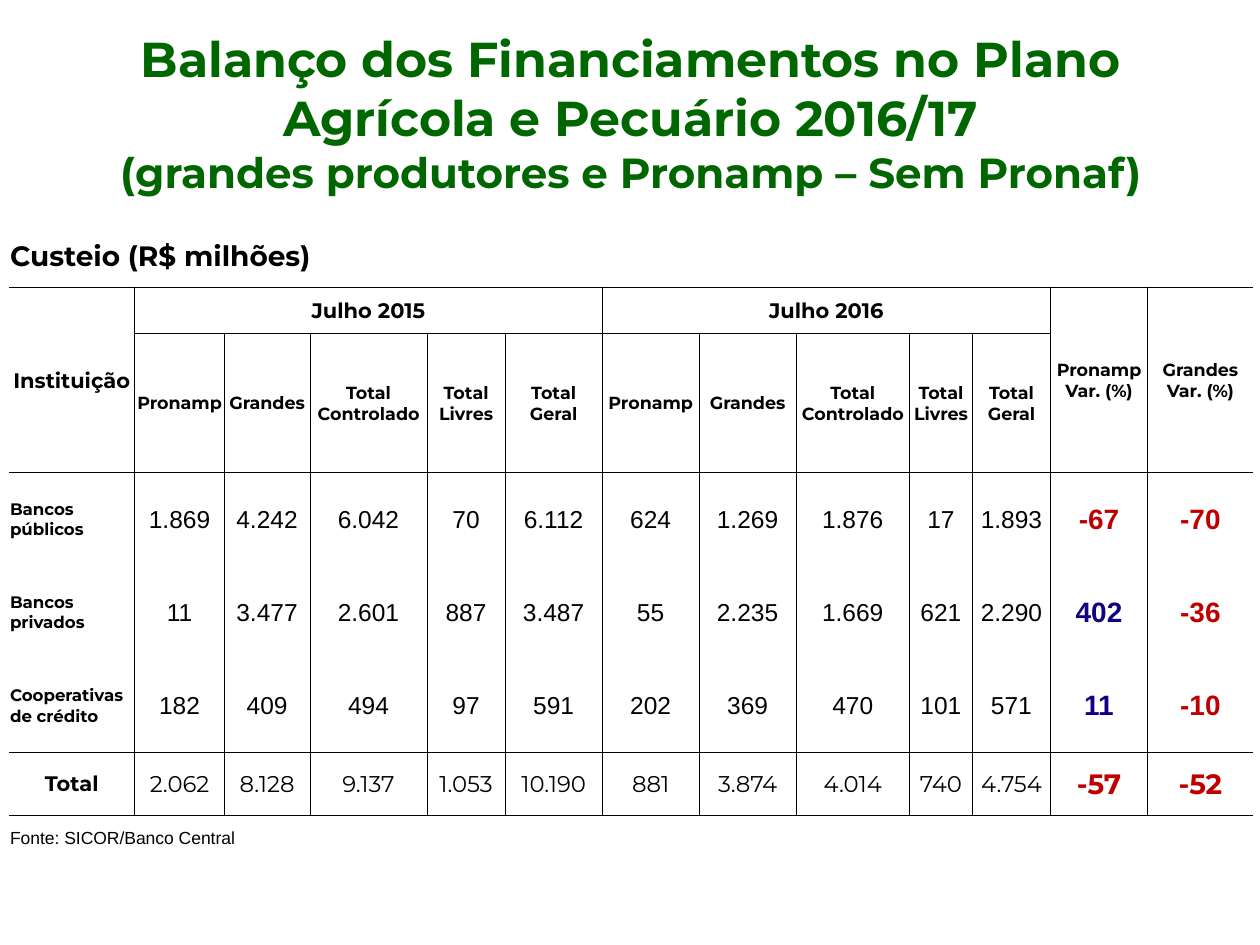
from lxml.etree import SubElement
from pptx import Presentation
from pptx.dml.color import RGBColor
from pptx.enum.text import MSO_ANCHOR, PP_ALIGN
from pptx.oxml.ns import qn
from pptx.util import Inches, Pt

BLACK = RGBColor(0x00, 0x00, 0x00)
GREEN = RGBColor(0x00, 0x66, 0x00)
RED = RGBColor(0xC0, 0x00, 0x00)
BLUE = RGBColor(0x11, 0x02, 0x84)

COLUMN_WIDTHS = [1, 0.71, 0.68, 0.76, 0.17, 0.62, 0.33, 0.44, 0.77,
                 0.11, 0.66, 0.12, 0.78, 0.5, 0.2, 0.42, 0.77, 0.84]
ROW_HEIGHTS = [0.5, 0.37, 1.1, 0.74, 0.74, 0.74, 0.5, 0.37]
LAST_COLUMN = len(COLUMN_WIDTHS) - 1
RULED_ROWS = range(1, 7)
LINES_ABOVE = {1, 2, 3, 6, 7}

# First grid column and number of columns of each visible column
FIELDS = [(0, 1), (1, 1), (2, 1), (3, 2), (5, 1), (6, 2), (8, 1),
          (9, 2), (11, 2), (13, 1), (14, 2), (16, 1), (17, 1)]

# Row, column, row span, column span, text
CAPTIONS = [
    (0, 0, 1, 4, "Custeio (R$ milhões)"),
    (0, 4, 1, 3, ""), (0, 7, 1, 1, ""), (0, 8, 1, 2, ""), (0, 10, 1, 2, ""),
    (0, 12, 1, 1, ""), (0, 13, 1, 2, ""),
    (0, 15, 1, 1, ""), (0, 16, 1, 1, ""), (0, 17, 1, 1, ""),
    (1, 0, 2, 1, "Instituição"),
    (1, 1, 1, 7, "Julho 2015"), (1, 8, 1, 8, "Julho 2016"),
    (1, 16, 2, 1, "Pronamp Var. (%)"), (1, 17, 2, 1, "Grandes Var. (%)"),
    (7, 0, 1, 3, "Fonte: SICOR/Banco Central"),
]
MEASURES = ["Pronamp", "Grandes", "Total Controlado", "Total Livres", "Total Geral"]
FIGURES = [
    ["Bancos públicos", "1.869", "4.242", "6.042", "70", "6.112",
     "624", "1.269", "1.876", "17", "1.893", "-67", "-70"],
    ["Bancos privados", "11", "3.477", "2.601", "887", "3.487",
     "55", "2.235", "1.669", "621", "2.290", "402", "-36"],
    ["Cooperativas de crédito", "182", "409", "494", "97", "591",
     "202", "369", "470", "101", "571", "11", "-10"],
    ["Total", "2.062", "8.128", "9.137", "1.053", "10.190",
     "881", "3.874", "4.014", "740", "4.754", "-57", "-52"],
]


def table_regions():
    """List every cell region as (row, column, row span, column span, text)."""
    regions = list(CAPTIONS)
    regions += [(2, column, 1, span, text)
                for (column, span), text in zip(FIELDS[1:11], MEASURES * 2)]
    for row, texts in enumerate(FIGURES, start=3):
        regions += [(row, column, 1, span, text)
                    for (column, span), text in zip(FIELDS, texts)]
    regions += [(7, column, 1, span, "") for column, span in FIELDS[3:]]
    return regions


def cell_format(row, column, text):
    """Return the font values, the colour and the alignment for a table cell."""
    font = {"name": "Montserrat", "size": Pt(12), "bold": True}
    color, align = BLACK, PP_ALIGN.CENTER
    if row == 0:
        font["size"], align = Pt(16), PP_ALIGN.LEFT
    elif row == 7:
        font, align = {"name": "Arial", "size": Pt(10), "bold": False}, PP_ALIGN.LEFT
    elif row == 2 or (row == 1 and column >= 16):
        font["size"] = Pt(10)
    elif row >= 3:
        if column and row < 6:
            font["name"] = "Arial"
        if column >= 16:
            font["size"] = Pt(16)
            color = RED if text.startswith("-") else BLUE
        elif column:
            font.update(size=Pt(14 if row < 6 else 13), bold=False)
        elif row < 6:
            font["size"], align = Pt(9.5), PP_ALIGN.LEFT
    return font, color, align


class SlideBuilder:
    def __init__(self, slide):
        self.slide = slide

    def add_span(self, para, text, font, color):
        span = para.add_run()
        span.text = text
        for name, value in font.items():
            setattr(span.font, name, value)
        span.font.color.rgb = color

    def title(self, lines, left, top, width, height):
        box = self.slide.shapes.add_textbox(
            Inches(left), Inches(top), Inches(width), Inches(height))
        frame = box.text_frame
        frame.word_wrap = True
        frame.vertical_anchor = MSO_ANCHOR.MIDDLE
        para = frame.paragraphs[0]
        para.alignment = PP_ALIGN.CENTER
        for index, (text, size) in enumerate(lines):
            if index:
                para.add_line_break()
            self.add_span(para, text, {"name": "Montserrat", "size": Pt(size), "bold": True}, GREEN)

    def borders(self, cell, edges):
        """Draw thin lines on the edges that are true and none on the others."""
        properties = cell._tc.get_or_add_tcPr()
        for position, (tag, visible) in enumerate(edges.items()):
            line = SubElement(properties, qn(f"a:{tag}"), w=str(Pt(0.5)))
            if visible:
                fill = SubElement(line, qn("a:solidFill"))
                SubElement(fill, qn("a:srgbClr"), val=str(BLACK))
            else:
                SubElement(line, qn("a:noFill"))
            properties.insert(position, line)

    def region(self, table, row, column, row_span, column_span, text):
        cell = table.cell(row, column)
        bottom, right = row + row_span - 1, column + column_span - 1
        if row_span * column_span > 1:
            cell.merge(table.cell(bottom, right))
        ruled = row in RULED_ROWS
        for r in range(row, bottom + 1):
            for c in range(column, right + 1):
                part = table.cell(r, c)
                part.fill.background()
                self.borders(part, {
                    "lnL": ruled and c == column and c > 0,
                    "lnR": ruled and c == right and c < LAST_COLUMN,
                    "lnT": r == row and r in LINES_ABOVE,
                    "lnB": r == bottom and r + 1 in LINES_ABOVE,
                })
        margins = {"margin_left": 0.01, "margin_right": 0.01,
                   "margin_top": 0.01, "margin_bottom": 0}
        for name, value in margins.items():
            setattr(cell, name, Inches(value))
        cell.vertical_anchor = MSO_ANCHOR.MIDDLE
        if text:
            font, color, align = cell_format(row, column, text)
            para = cell.text_frame.paragraphs[0]
            para.alignment = align
            self.add_span(para, text, font, color)

    def table(self, regions, left, top):
        table = self.slide.shapes.add_table(
            len(ROW_HEIGHTS), len(COLUMN_WIDTHS), Inches(left), Inches(top),
            Inches(sum(COLUMN_WIDTHS)), Inches(sum(ROW_HEIGHTS))).table
        table.first_row = table.horz_banding = False
        for column, width in zip(table.columns, COLUMN_WIDTHS):
            column.width = Inches(width)
        for row, height in zip(table.rows, ROW_HEIGHTS):
            row.height = Inches(height)
        for region in regions:
            self.region(table, *region)


def main():
    deck = Presentation()
    deck.slide_width, deck.slide_height = Inches(10), Inches(7.5)
    page = SlideBuilder(deck.slides.add_slide(deck.slide_layouts[6]))
    page.table(table_regions(), 0.07, 1.78)
    page.title([("Balanço dos Financiamentos no Plano Agrícola e Pecuário 2016/17", 28),
                ("(grandes produtores e Pronamp – Sem Pronaf)", 24)],
               0.51, 0.29, 8.99, 1.21)
    deck.save("out.pptx")


if __name__ == "__main__":
    main()
